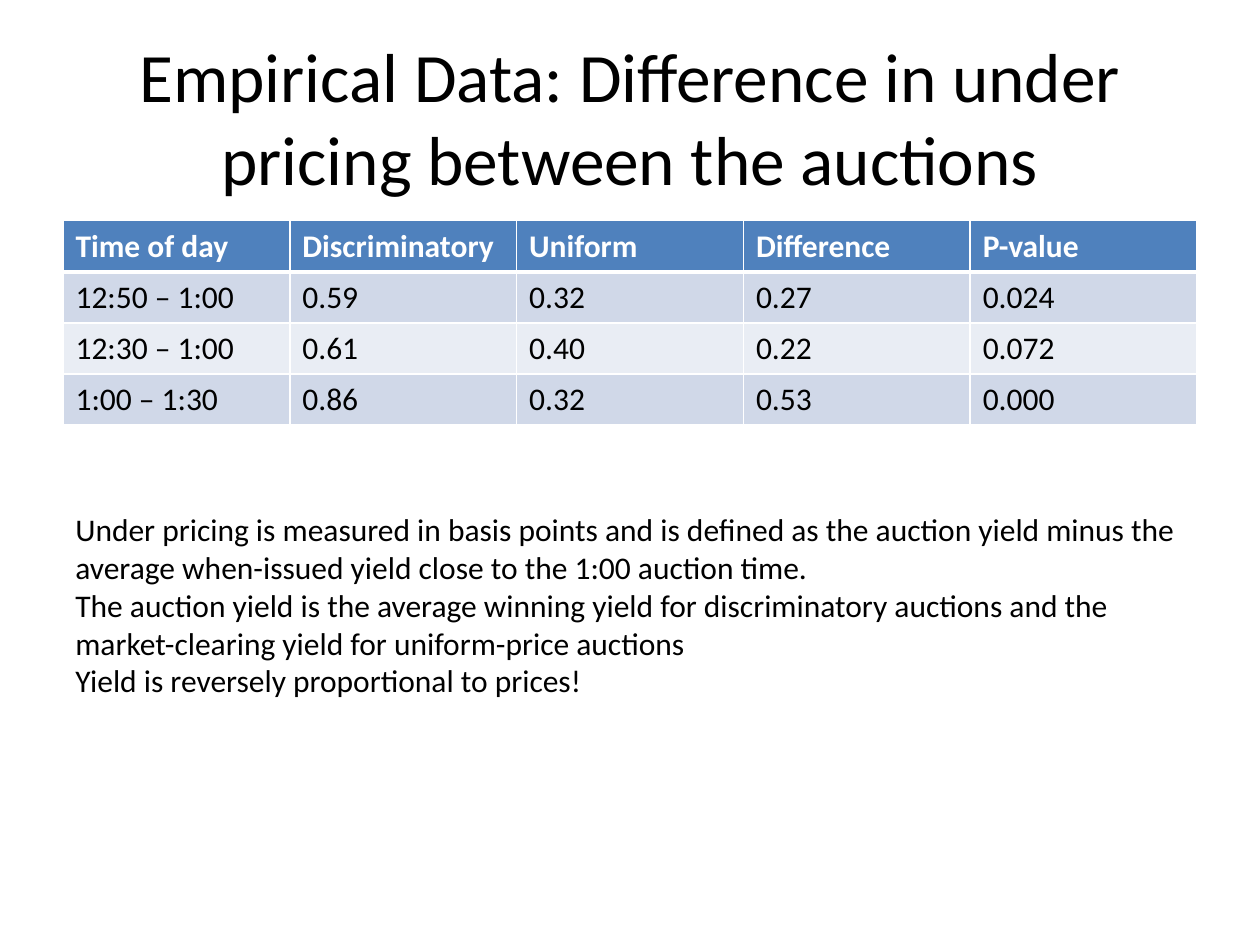
from lxml import etree
from pptx import Presentation
from pptx.dml.color import RGBColor
from pptx.enum.text import MSO_ANCHOR, MSO_AUTO_SIZE, PP_ALIGN
from pptx.oxml.ns import qn
from pptx.util import Cm, Pt

CENTER = PP_ALIGN.CENTER
MIDDLE = MSO_ANCHOR.MIDDLE
NO_FIT = MSO_AUTO_SIZE.NONE
GROW = MSO_AUTO_SIZE.SHAPE_TO_FIT_TEXT

FONT = "Calibri"
COLORS = {
    "text": "000000",
    "white": "FFFFFF",
    "header": "4F81BD",
    "odd": "D0D8E8",
    "even": "E9EDF4",
}
LEFT, WIDTH = Cm(1.27), Cm(22.86)

TITLE = "Empirical Data: Difference in under pricing between the auctions"
ROWS = [
    ["Time of day", "Discriminatory", "Uniform", "Difference", "P-value"],
    ["12:50 – 1:00", "0.59", "0.32", "0.27", "0.024"],
    ["12:30 – 1:00", "0.61", "0.40", "0.22", "0.072"],
    ["1:00 – 1:30", "0.86", "0.32", "0.53", "0.000"],
]
NOTES = [
    "Under pricing is measured in basis points and is defined as the auction "
    "yield minus the average when-issued yield close to the 1:00 auction time.",
    "The auction yield is the average winning yield for discriminatory auctions "
    "and the market-clearing yield for uniform-price auctions",
    "Yield is reversely proportional to prices!",
]


def add_run(p, text, size=18, color="text", bold=False):
    """Add one formatted run to a paragraph."""
    r = p.add_run()
    r.text = text
    r.font.name = FONT
    r.font.size = Pt(size)
    r.font.bold = bold
    r.font.color.rgb = RGBColor.from_string(COLORS[color])


def add_title(slide, text):
    """Place and fill the title placeholder."""
    sp = slide.shapes.title
    sp.left, sp.top, sp.width, sp.height = LEFT, Cm(0.76), WIDTH, Cm(3.18)
    tf = sp.text_frame
    tf.auto_size = NO_FIT
    tf.vertical_anchor = MIDDLE
    p = tf.paragraphs[0]
    p.alignment = CENTER
    add_run(p, text, 39.6)


def set_border(cell, side, width):
    """Draw a white border on one side of a cell."""
    tc_pr = cell._tc.get_or_add_tcPr()
    ln = etree.SubElement(tc_pr, qn(f"a:ln{side}"), w=str(Pt(width)))
    fill = etree.SubElement(ln, qn("a:solidFill"))
    etree.SubElement(fill, qn("a:srgbClr"), val=COLORS["white"])


def add_data_table(slide, rows):
    """Add the auction table with a header and banded rows."""
    n_rows, n_cols = len(rows), len(rows[0])
    table = slide.shapes.add_table(
        n_rows, n_cols, LEFT, Cm(4.45), WIDTH, Cm(1.03) * n_rows
    ).table
    for i, row in enumerate(rows):
        header = i == 0
        band = "header" if header else "odd" if i % 2 else "even"
        widths = {"L": 1, "R": 1, "T": 3 if i == 1 else 1, "B": 3 if header else 1}
        for j, text in enumerate(row):
            cell = table.cell(i, j)
            for side, width in widths.items():
                set_border(cell, side, width)
            cell.fill.solid()
            cell.fill.fore_color.rgb = RGBColor.from_string(COLORS[band])
            p = cell.text_frame.paragraphs[0]
            add_run(p, text, color="white" if header else "text", bold=header)


def add_notes_box(slide, notes):
    """Add the explanatory paragraphs below the table."""
    tf = slide.shapes.add_textbox(LEFT, Cm(10.16), WIDTH, Cm(4.11)).text_frame
    tf.word_wrap = True
    tf.auto_size = GROW
    for i, text in enumerate(notes):
        p = tf.add_paragraph() if i else tf.paragraphs[0]
        add_run(p, text)


def main():
    """Build and save the slide."""
    prs = Presentation()
    prs.slide_width, prs.slide_height = Cm(25.4), Cm(19.05)
    slide = prs.slides.add_slide(prs.slide_layouts[5])
    add_title(slide, TITLE)
    add_data_table(slide, ROWS)
    add_notes_box(slide, NOTES)
    prs.save("out.pptx")


if __name__ == "__main__":
    main()
